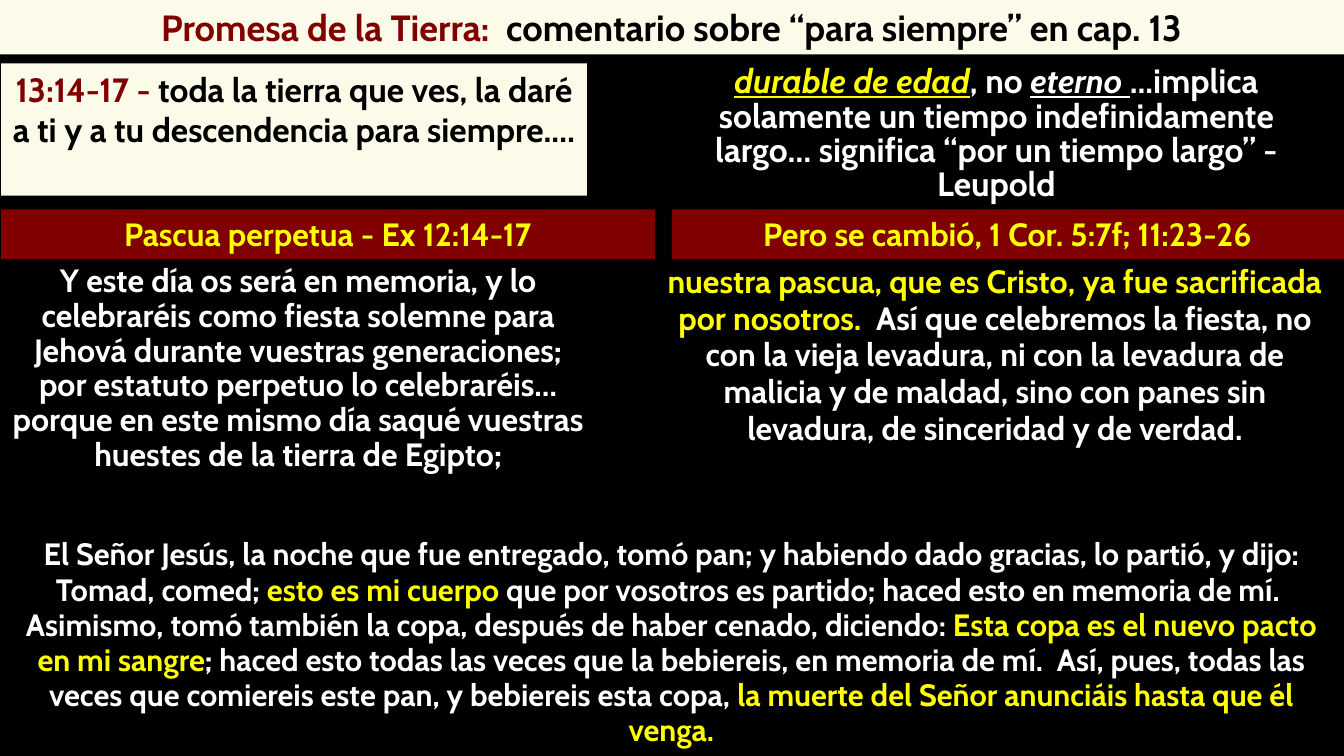
"""Build the slide on the land promise and the meaning of "para siempre"."""
from dataclasses import dataclass
from typing import Optional

from pptx import Presentation
from pptx import util as u
from pptx.dml import color
from pptx.enum import shapes, text

COLORS = {
    "black": "000000",
    "white": "FFFFFF",
    "yellow": "FFFF00",
    "maroon": "800000",
    "cream": "FCFBEA",
}
FONT = "Cabin"


@dataclass(frozen=True)
class Run:
    words: str
    color: str
    stressed: bool = False


@dataclass(frozen=True)
class Panel:
    left: float
    top: float
    width: float
    height: float
    size: int
    runs: tuple[Run, ...]
    fill: Optional[str] = None
    spacing: float = 1.0


PANELS = (
    Panel(0.03, 5.28, 16.48, 1.25, 23, (
        Run("Pascua perpetua - Ex 12:14-17", "yellow"),
    ), fill="maroon"),
    Panel(16.93, 5.28, 16.94, 1.25, 23, (
        Run("Pero se cambió, 1 Cor. 5:7f; 11:23-26", "yellow"),
    ), fill="maroon"),
    Panel(0.03, 6.55, 14.99, 6.45, 23, (
        Run("Y este día os será en memoria, y lo celebraréis como fiesta "
            "solemne para Jehová durante vuestras generaciones; por estatuto "
            "perpetuo lo celebraréis…porque en este mismo día saqué vuestras "
            "huestes de la tierra de Egipto;", "white"),
    ), spacing=0.9),
    Panel(16.3, 6.53, 17.57, 5.87, 23, (
        Run("nuestra pascua, que es Cristo, ya fue sacrificada por nosotros.",
            "yellow"),
        Run("  Así que celebremos la fiesta, no con la vieja levadura, ni con "
            "la levadura de malicia y de maldad, sino con panes sin levadura, "
            "de sinceridad y de verdad.", "white"),
    ), spacing=0.95),
    Panel(0, 13.43, 33.84, 5.62, 22, (
        Run("El Señor Jesús, la noche que fue entregado, tomó pan; y habiendo "
            "dado gracias, lo partió, y dijo: Tomad, comed; ", "white"),
        Run("esto es mi cuerpo", "yellow"),
        Run(" que por vosotros es partido; haced esto en memoria de mí.  "
            "Asimismo, tomó también la copa, después de haber cenado, "
            "diciendo: ", "white"),
        Run("Esta copa es el nuevo pacto en mi sangre", "yellow"),
        Run("; haced esto todas las veces que la bebiereis, en memoria de mí.  "
            "Así, pues, todas las veces que comiereis este pan, y bebiereis "
            "esta copa, ", "white"),
        Run("la muerte del Señor anunciáis hasta que él venga.", "yellow"),
    ), spacing=0.95),
    Panel(0, 0, 33.87, 1.37, 26, (
        Run("Promesa de la Tierra:  ", "maroon"),
        Run("comentario sobre “para siempre” en cap. 13", "black"),
    ), fill="cream"),
    Panel(0.03, 1.6, 14.76, 3.33, 24, (
        Run("13:14-17 - ", "maroon"),
        Run("toda la tierra que ves, la daré a ti y a tu descendencia para "
            "siempre.…", "black"),
    ), fill="cream"),
    Panel(16.93, 1.55, 16.36, 3.73, 24, (
        Run("durable de edad", "yellow", stressed=True),
        Run(", no ", "white"),
        Run("eterno ", "white", stressed=True),
        Run("...implica solamente un tiempo indefinidamente largo… significa "
            "“por un tiempo largo” - Leupold", "white"),
    ), spacing=0.85),
)


def rgb(name: str) -> color.RGBColor:
    """Return the named colour."""
    return color.RGBColor.from_string(COLORS[name])


def draw_panel(s, panel: Panel) -> None:
    """Draw a filled rectangle or a plain text box with its runs."""
    box = [u.Cm(n) for n in (panel.left, panel.top, panel.width, panel.height)]
    if panel.fill:
        sp = s.shapes.add_shape(shapes.MSO_SHAPE.RECTANGLE, *box)
        sp.shadow.inherit = False
        sp.fill.solid()
        sp.fill.fore_color.rgb = rgb(panel.fill)
        sp.line.fill.background()
    else:
        sp = s.shapes.add_textbox(*box)
    tf = sp.text_frame
    tf.word_wrap = True
    tf.vertical_anchor = text.MSO_ANCHOR.TOP
    p = tf.paragraphs[0]
    p.alignment = text.PP_ALIGN.CENTER
    p.line_spacing = panel.spacing
    for run in panel.runs:
        r = p.add_run()
        r.text = run.words
        r.font.name = FONT
        r.font.size = u.Pt(panel.size)
        r.font.bold = True
        r.font.italic = run.stressed
        r.font.underline = run.stressed
        r.font.color.rgb = rgb(run.color)


def main() -> None:
    """Create and save the presentation."""
    prs = Presentation()
    prs.slide_width, prs.slide_height = u.Cm(33.87), u.Cm(19.05)
    s = prs.slides.add_slide(prs.slide_layouts[6])
    s.background.fill.solid()
    s.background.fill.fore_color.rgb = rgb("black")
    for panel in PANELS:
        draw_panel(s, panel)
    prs.save("out.pptx")


if __name__ == "__main__":
    main()
